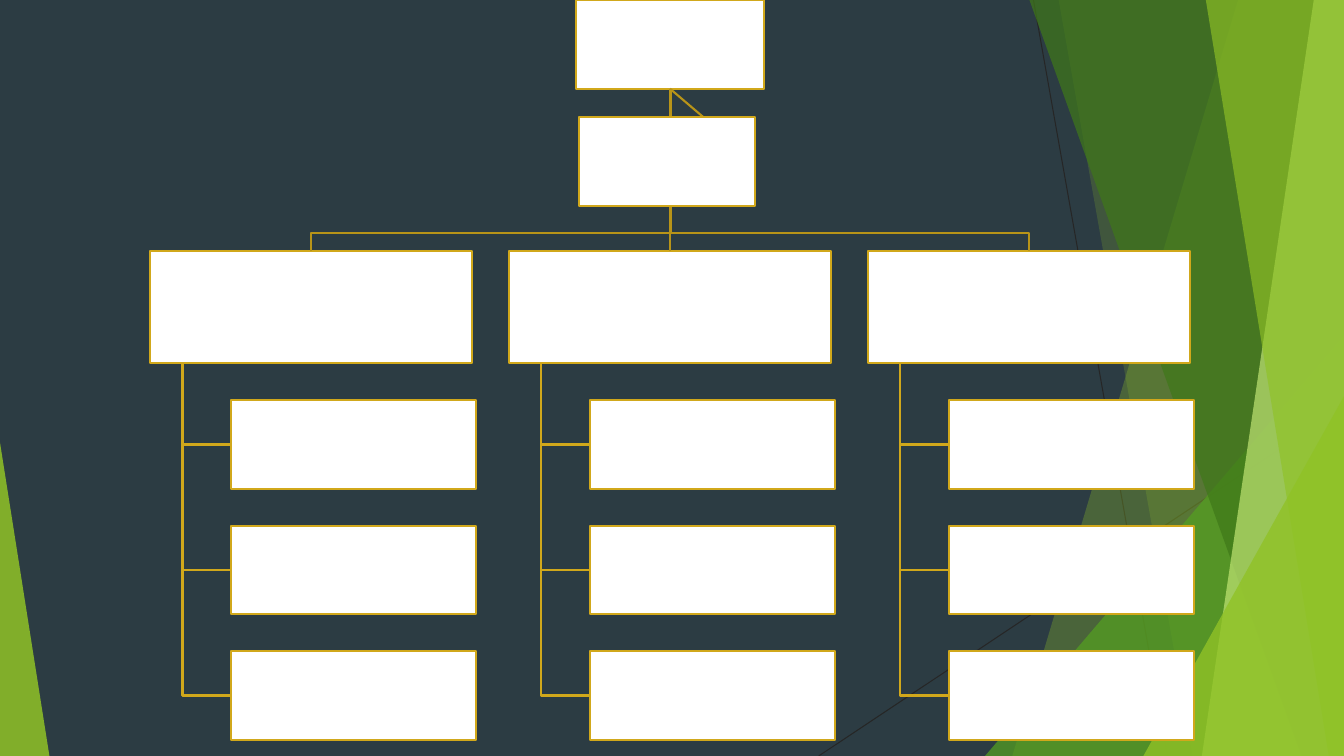
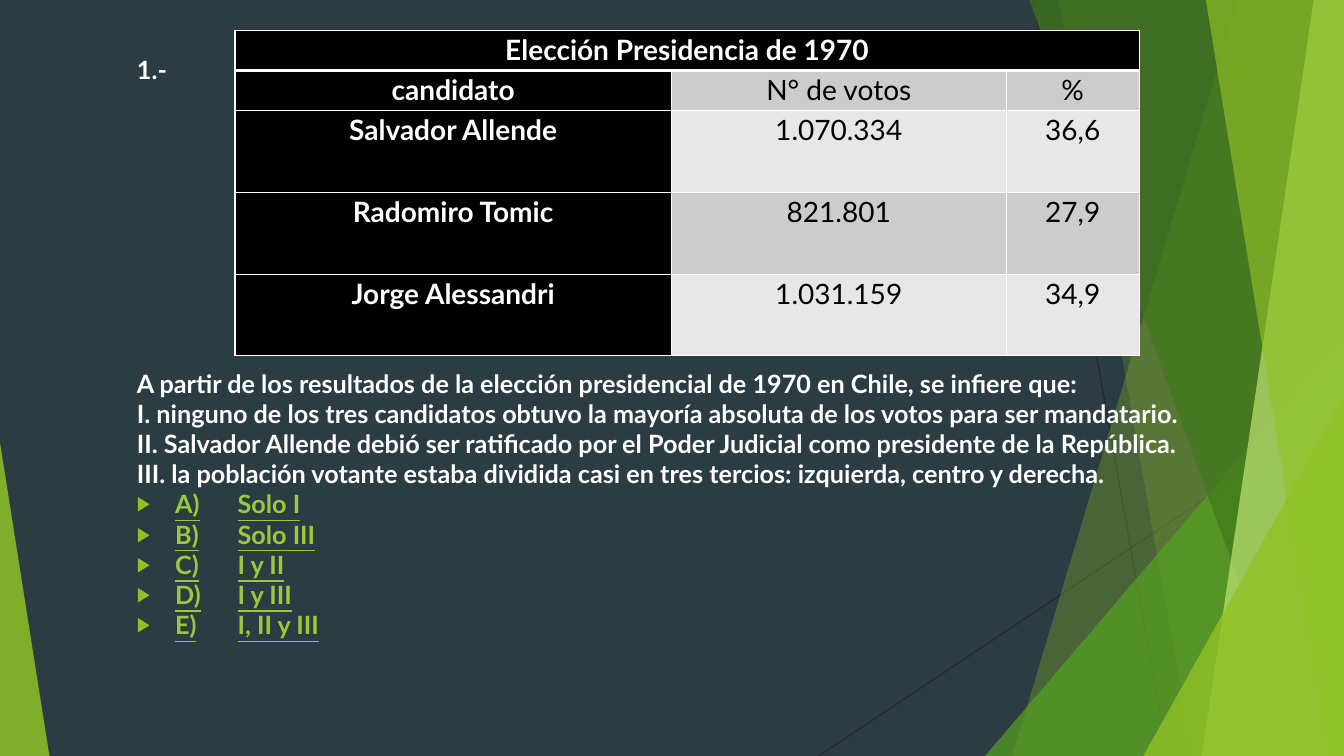
from lxml import etree
from pptx import Presentation
from pptx import util as u
from pptx.dml.color import RGBColor
from pptx.enum import shapes, text
from pptx.oxml import ns

WIDTH, HEIGHT = 13.33, 7.5
NIGHT, WHITE, BLACK = "2C3C43", "FFFFFF", "000000"
LIME, GOLD, DARK_GOLD = "90C226", "D1A81B", "B89418"
ANSWER_GREEN, HAIRLINE = "99CA3C", "262626"
BAND_DARK, BAND_LIGHT = "CCCCCC", "E7E7E7"


def rgb(hex_code):
    return RGBColor.from_string(hex_code)


def apply(target, values):
    for name, value in values.items():
        setattr(target, name, value)


def add_xml(parent, tag, **attributes):
    return etree.SubElement(parent, ns.qn(tag), attributes)


class Deck:
    body = {"name": "Lato", "size": u.Pt(18), "bold": True}
    cell = {"name": "Lato", "size": u.Pt(20)}
    cell_margins = {"margin_left": u.Inches(0.07), "margin_right": u.Inches(0.07),
                    "margin_top": 0, "margin_bottom": 0}
    centred = {"alignment": text.PP_ALIGN.CENTER, "line_spacing": 1.07}

    def __init__(self):
        self.prs = Presentation()
        apply(self.prs, {"slide_width": u.Inches(WIDTH), "slide_height": u.Inches(HEIGHT)})
        self.layout = self.prs.slide_layouts[6]
        self.slide = None

    def new_slide(self):
        self.slide = self.prs.slides.add_slide(self.layout)

    def move_to_layout(self):
        tree = self.layout.shapes._spTree
        for placeholder in list(self.layout.placeholders):
            tree.remove(placeholder._element)
        for shape in list(self.slide.shapes):
            tree.append(shape._element)

    def paint(self, shape, fill=None, alpha=100, line=None, weight=1.5):
        shape.shadow.inherit = False
        if fill:
            shape.fill.solid()
            shape.fill.fore_color.rgb = rgb(fill)
            if alpha < 100:
                colour = shape._element.spPr.find(ns.qn("a:solidFill"))[0]
                add_xml(colour, "a:alpha", val=str(alpha * 1000))
        else:
            shape.fill.background()
        if line:
            shape.line.color.rgb = rgb(line)
            shape.line.width = u.Pt(weight)
        else:
            shape.line.fill.background()
        return shape

    def outline(self, points, closed=False, **look):
        start, *rest = [(u.Inches(x), u.Inches(y)) for x, y in points]
        builder = self.slide.shapes.build_freeform(*start)
        builder.add_line_segments(rest, close=closed)
        return self.paint(builder.convert_to_shape(), **look)

    def triangle(self, left, top, width, apex, **look):
        shape = self.slide.shapes.add_shape(
            shapes.MSO_SHAPE.ISOSCELES_TRIANGLE, u.Inches(left), u.Inches(top),
            u.Inches(width), u.Inches(HEIGHT - top))
        shape.adjustments[0] = apex
        return self.paint(shape, **look)

    def box(self, left, top, width, height):
        shape = self.slide.shapes.add_shape(
            shapes.MSO_SHAPE.RECTANGLE, u.Inches(left), u.Inches(top),
            u.Inches(width), u.Inches(height))
        return self.paint(shape, fill=WHITE, line=GOLD)

    def line(self, start, end, colour, weight):
        connector = self.slide.shapes.add_connector(
            shapes.MSO_CONNECTOR.STRAIGHT, *[u.Inches(v) for v in (*start, *end)])
        connector.line.color.rgb = rgb(colour)
        connector.line.width = u.Pt(weight)
        add_xml(connector._element.spPr, "a:effectLst")
        return connector

    def text_box(self, left, top, width, height):
        frame = self.slide.shapes.add_textbox(
            u.Inches(left), u.Inches(top), u.Inches(width), u.Inches(height)).text_frame
        frame.word_wrap = True
        return frame

    def set_text(self, paragraph, words, colour, font, layout=None):
        paragraph.text = words
        apply(paragraph, layout or {})
        apply(paragraph.font, font)
        paragraph.font.color.rgb = rgb(colour)

    def bullet(self, paragraph):
        properties = paragraph._p.get_or_add_pPr()
        indent = u.Inches(0.38)
        properties.set("marL", str(indent))
        properties.set("indent", str(-indent))
        add_xml(add_xml(properties, "a:buClr"), "a:srgbClr", val=LIME)
        add_xml(properties, "a:buSzPct", val="80000")
        add_xml(properties, "a:buFont", typeface="Arial")
        add_xml(properties, "a:buChar", char="▶")

    def borders(self, cell, **weights):
        properties = cell._tc.get_or_add_tcPr()
        for position, side in enumerate("LRTB"):
            edge = etree.Element(ns.qn(f"a:ln{side}"), w=str(u.Pt(weights.get(side, 1))))
            add_xml(add_xml(edge, "a:solidFill"), "a:srgbClr", val=WHITE)
            properties.insert(position, edge)

    def table(self, left, top, widths, heights, rows):
        grid = self.slide.shapes.add_table(
            len(rows), len(widths), u.Inches(left), u.Inches(top),
            u.Inches(sum(widths)), u.Inches(sum(heights))).table
        for column, width in zip(grid.columns, widths):
            column.width = u.Inches(width)
        for r, (values, height) in enumerate(zip(rows, heights)):
            grid.rows[r].height = u.Inches(height)
            for c, value in enumerate(values):
                cell = grid.cell(r, c)
                heading = r == 0 or c == 0
                apply(cell, self.cell_margins)
                cell.fill.solid()
                band = BAND_DARK if r % 2 else BAND_LIGHT
                cell.fill.fore_color.rgb = rgb(BLACK if heading else band)
                self.borders(cell, **{0: {"B": 3}, 1: {"T": 3}}.get(r, {}))
                if value:
                    self.set_text(cell.text_frame.paragraphs[0], value,
                                  WHITE if heading else BLACK,
                                  {**self.cell, "bold": heading}, self.centred)
        grid.cell(0, 0).merge(grid.cell(0, len(widths) - 1))


def draw_backdrop(deck):
    fill = deck.layout.background.fill
    fill.solid()
    fill.fore_color.rgb = rgb(NIGHT)

    def facet(top_x, bottom_x, colour, alpha):
        deck.outline([(top_x, 0), (WIDTH, 0), (WIDTH, HEIGHT), (bottom_x, HEIGHT)],
                     closed=True, fill=colour, alpha=alpha)

    deck.line((10.25, 0), (11.58, HEIGHT), HAIRLINE, 0.75)
    deck.line((WIDTH, 4.03), (8.12, HEIGHT), HAIRLINE, 0.75)
    facet(12.28, 10.04, LIME, 30)
    facet(10.5, 11.83, LIME, 20)
    deck.triangle(9.77, 3.33, 3.56, 1, fill="54A021", alpha=72)
    facet(10.21, 12.91, "3F7819", 70)
    facet(13.03, 11.92, "C0E474", 70)
    facet(11.96, 13.18, LIME, 65)
    deck.triangle(11.34, 3.93, 1.99, 1, fill=LIME, alpha=80)
    deck.triangle(0, 4.39, 0.49, 0, fill=LIME, alpha=85)
    deck.move_to_layout()


def draw_organization(deck):
    root_x, root_bottom, rail_y = 6.65, 0.88, 2.31
    branch_top, branch_width, branch_height = 2.49, 3.19, 1.11
    branch_bottom = branch_top + branch_height
    leaf_width, leaf_height = 2.43, 0.88

    root = deck.box(5.71, 0, 1.87, root_bottom)
    for column in range(3):
        left = 1.49 + 3.56 * column
        middle = left + branch_width / 2
        branch = deck.box(left, branch_top, branch_width, branch_height)
        if column == 1:
            trunk = deck.line((root_x, root_bottom), (root_x, branch_top), DARK_GOLD, 1.5)
            trunk.begin_connect(root, 2)
            trunk.end_connect(branch, 0)
        else:
            deck.outline([(root_x, root_bottom), (root_x, rail_y),
                          (middle, rail_y), (middle, branch_top)], line=DARK_GOLD)
        stem_x, leaf_left = left + 0.32, left + 0.8
        for row in range(3):
            leaf_top = 3.97 + 1.245 * row
            leaf_middle = leaf_top + leaf_height / 2
            deck.outline([(stem_x, branch_bottom), (stem_x, leaf_middle),
                          (leaf_left, leaf_middle)], line=GOLD)
            deck.box(leaf_left, leaf_top, leaf_width, leaf_height)

    link = deck.line((root_x, root_bottom), (7.49, 1.6), DARK_GOLD, 1.5)
    assistant = deck.box(5.74, 1.16, 1.75, 0.88)
    link.begin_connect(root, 2)
    link.end_connect(assistant, 3)


def draw_question(deck):
    number = deck.text_box(1.26, 0.49, 1, 0.4)
    deck.set_text(number.paragraphs[0], "1.-", WHITE, deck.body)

    deck.table(2.33, 0.3, [4.33, 3.32, 1.32], [0.4, 0.4, 0.81, 0.81, 0.81], [
        ["Elección Presidencia de 1970", "", ""],
        ["candidato", "N° de votos", "%"],
        ["Salvador Allende", "1.070.334", "36,6"],
        ["Radomiro Tomic", "821.801", "27,9"],
        ["Jorge Alessandri", "1.031.159", "34,9"],
    ])

    statements = [
        "A partir de los resultados de la elección presidencial de 1970 en Chile, se infiere que:",
        "I. ninguno de los tres candidatos obtuvo la mayoría absoluta de los votos para ser mandatario.",
        "II. Salvador Allende debió ser ratificado por el Poder Judicial como presidente de la República.",
        "III. la población votante estaba dividida casi en tres tercios: izquierda, centro y derecha.",
    ]
    answers = ["Solo I", "Solo III", "I y II", "I y III", "I, II y III"]
    question = deck.text_box(1.26, 3.6, 11.8, 2.8)
    for index, statement in enumerate(statements):
        paragraph = question.add_paragraph() if index else question.paragraphs[0]
        deck.set_text(paragraph, statement, WHITE, deck.body,
                      {"alignment": text.PP_ALIGN.JUSTIFY})
    for letter, answer in zip("ABCDE", answers):
        paragraph = question.add_paragraph()
        deck.bullet(paragraph)
        deck.set_text(paragraph, f"{letter})\t{answer}", ANSWER_GREEN,
                      {**deck.body, "underline": True})


def main():
    deck = Deck()
    deck.new_slide()
    draw_backdrop(deck)
    draw_organization(deck)
    deck.new_slide()
    draw_question(deck)
    deck.prs.save("out.pptx")


if __name__ == "__main__":
    main()
